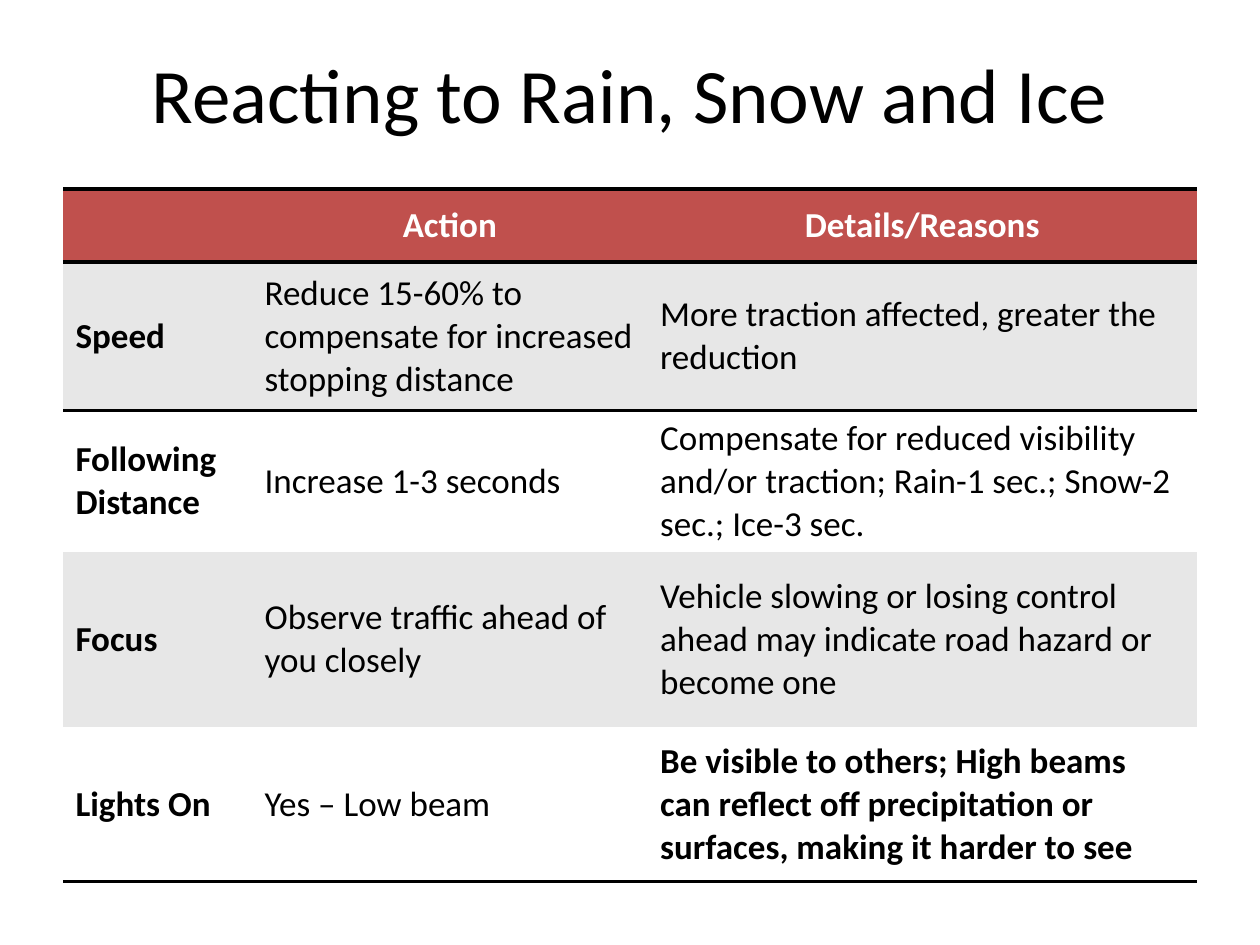
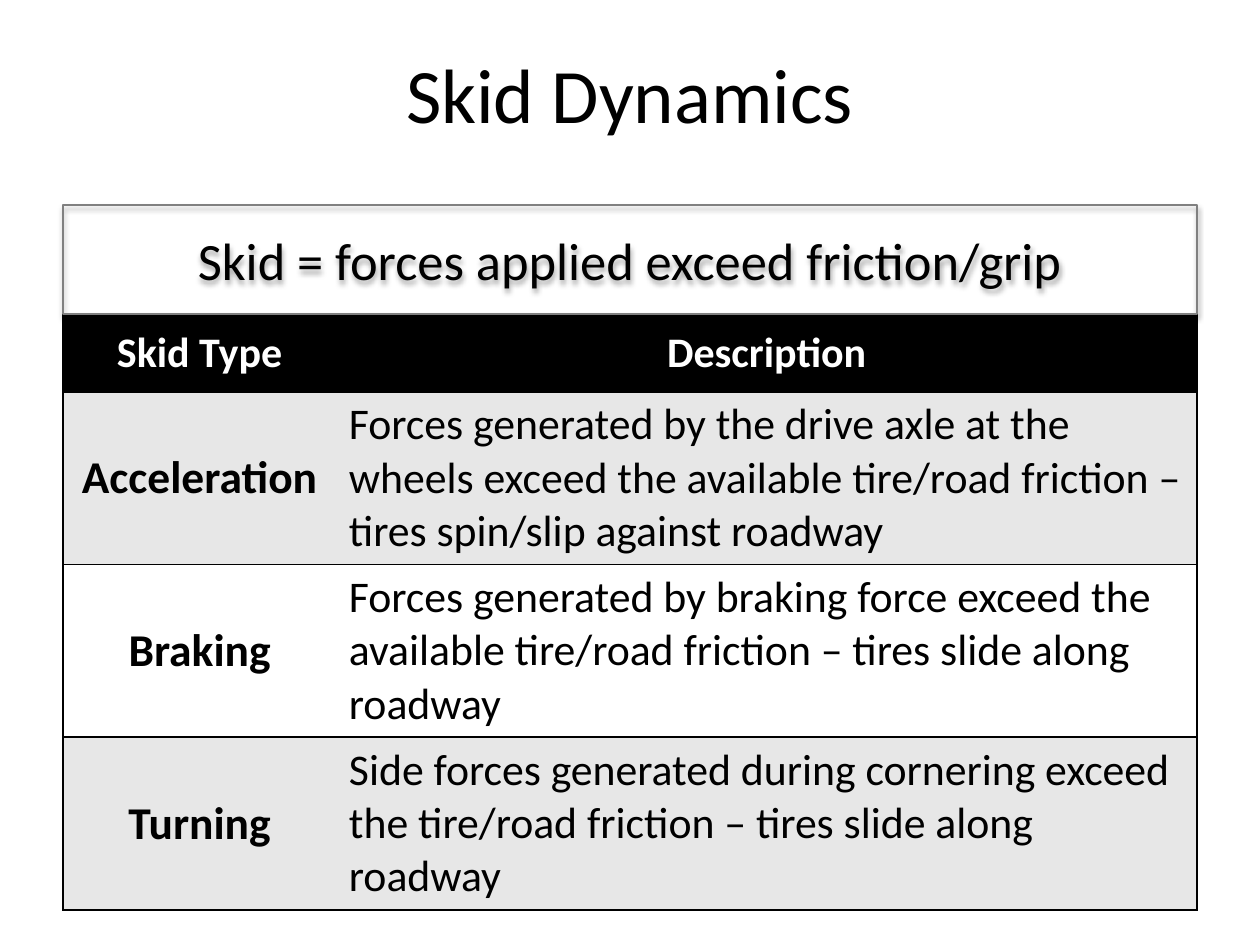
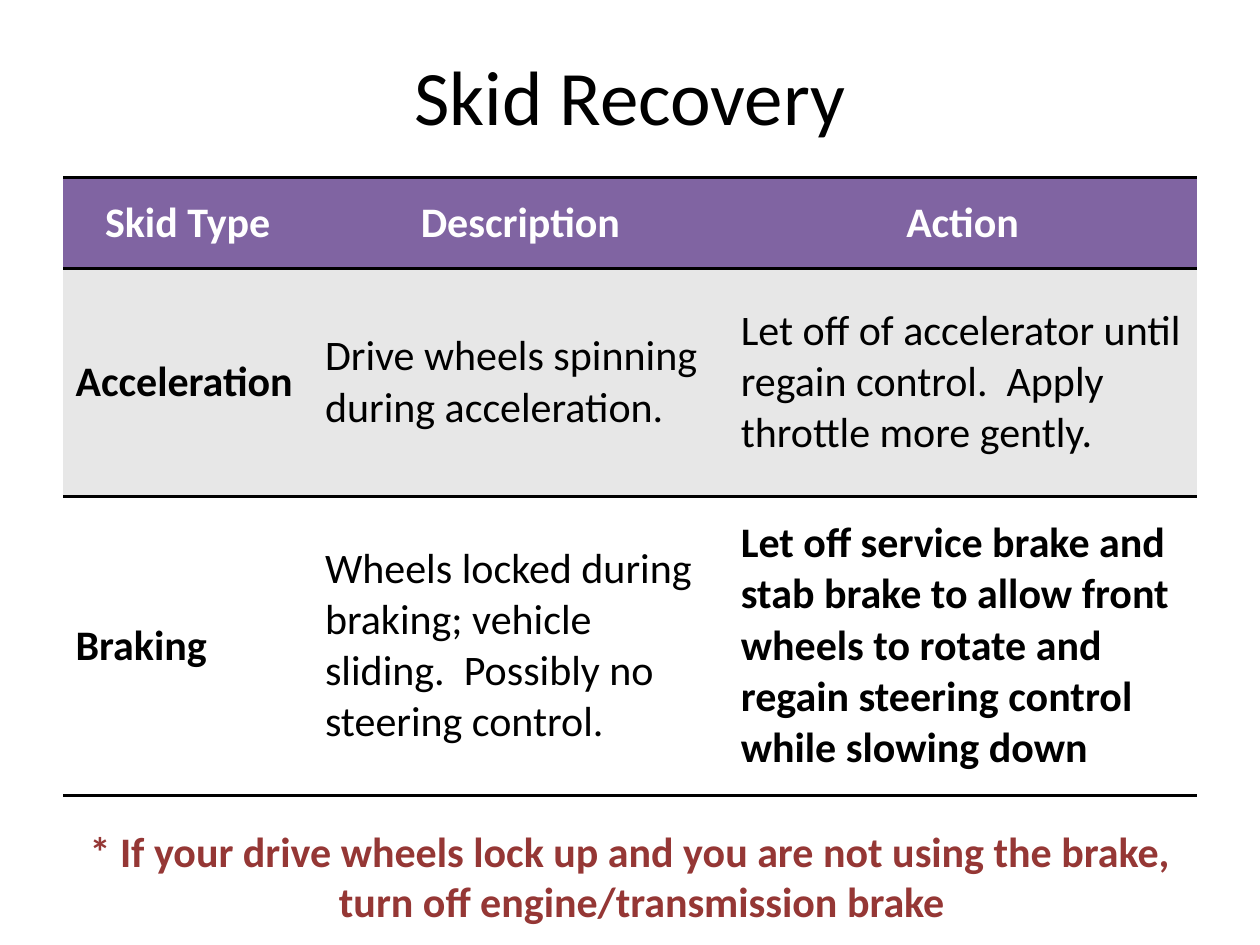
from dataclasses import dataclass

from lxml import etree
from pptx import Presentation
from pptx.dml.color import RGBColor
from pptx.enum.shapes import MSO_SHAPE
from pptx.enum.text import MSO_ANCHOR, MSO_AUTO_SIZE, PP_ALIGN
from pptx.oxml.ns import qn
from pptx.util import Emu, Inches, Pt

BLACK = RGBColor(0x00, 0x00, 0x00)
WHITE = RGBColor(0xFF, 0xFF, 0xFF)
BAND = RGBColor(0xE7, 0xE7, 0xE7)
RED = RGBColor(0xC0, 0x50, 0x4D)
PURPLE = RGBColor(0x80, 0x64, 0xA2)
DARK_RED = RGBColor(0x95, 0x37, 0x35)
GREY = RGBColor(0x80, 0x80, 0x80)

CENTER, LEFT = PP_ALIGN.CENTER, PP_ALIGN.LEFT
MIDDLE, TOP = MSO_ANCHOR.MIDDLE, MSO_ANCHOR.TOP
RECTANGLE = MSO_SHAPE.RECTANGLE

FONT = "Calibri"
SLIDE_W, SLIDE_H = Inches(10), Inches(7.5)
MARGIN, CONTENT = 5, 90  # percent of slide width
NO_STYLE = "{2D5ABB26-0587-4C30-8999-92F81FD0307C}"


def across(percent: float) -> Emu:
    return Emu(round(SLIDE_W * percent / 100))


def down(percent: float) -> Emu:
    return Emu(round(SLIDE_H * percent / 100))


@dataclass(frozen=True)
class TableSpec:
    """Top and row heights in percent of slide height, columns of slide width."""
    top: float
    cols: tuple[float, ...]
    heights: tuple[float, ...]
    rows: tuple[tuple[str, ...], ...]
    header_fill: RGBColor
    header_size: float
    label_size: float
    body_size: float
    rule: float
    label_align: PP_ALIGN = LEFT
    boxed: bool = False
    bold_last: bool = False


@dataclass(frozen=True)
class SlideSpec:
    title: str
    table: TableSpec
    title_top: float = 2.93
    title_height: float = 13.73
    banner: str = ""
    footnote: str = ""


SLIDES = (
    SlideSpec("Reacting to Rain, Snow and Ice", TableSpec(
        top=20, cols=(15, 31.4, 43.6), heights=(7.73, 15.73, 14.93, 18.53, 16.4),
        rows=(
            ("", "Action", "Details/Reasons"),
            ("Speed", "Reduce 15-60% to compensate for increased stopping distance",
             "More traction affected, greater the reduction"),
            ("Following Distance", "Increase 1-3 seconds",
             "Compensate for reduced visibility and/or traction; "
             "Rain-1 sec.; Snow-2 sec.; Ice-3 sec."),
            ("Focus", "Observe traffic ahead of you closely",
             "Vehicle slowing or losing control ahead may indicate "
             "road hazard or become one"),
            ("Lights On", "Yes – Low beam",
             "Be visible to others; High beams can reflect off precipitation "
             "or surfaces, making it harder to see"),
        ),
        header_fill=RED, header_size=20, label_size=20, body_size=20, rule=2,
        bold_last=True)),
    SlideSpec("Skid Dynamics", TableSpec(
        top=33.2, cols=(21.7, 68.3), heights=(8.27, 18.27, 18.27, 18.27),
        rows=(
            ("Skid Type", "Description"),
            ("Acceleration", "Forces generated by the drive axle at the wheels exceed the "
             "available tire/road friction – tires spin/slip against roadway"),
            ("Braking", "Forces generated by braking force exceed the available "
             "tire/road friction – tires slide along roadway"),
            ("Turning", "Side forces generated during cornering exceed the "
             "tire/road friction – tires slide along roadway"),
        ),
        header_fill=BLACK, header_size=24, label_size=26, body_size=25, rule=1,
        label_align=CENTER, boxed=True),
        banner="Skid = forces applied exceed friction/grip"),
    SlideSpec("Skid Recovery", TableSpec(
        top=18.8, cols=(19.8, 33, 37.2), heights=(9.6, 24.1, 31.7),
        rows=(
            ("Skid Type", "Description", "Action"),
            ("Acceleration", "Drive wheels spinning during acceleration.",
             "Let off of accelerator until regain control.  Apply throttle more gently."),
            ("Braking", "Wheels locked during braking; vehicle sliding.  "
             "Possibly no steering control.",
             "Let off service brake and stab brake to allow front wheels to rotate "
             "and regain steering control while slowing down"),
        ),
        header_fill=PURPLE, header_size=24, label_size=24, body_size=24, rule=2,
        bold_last=True),
        title_top=3.33, title_height=13.33,
        footnote="* If your drive wheels lock up and you are not using the brake, "
                 "turn off engine/transmission brake"),
)


def write(tf, text: str, size: float, color: RGBColor = BLACK,
          bold: bool = False, align: PP_ALIGN = CENTER):
    p = tf.paragraphs[0]
    p.alignment = align
    r = p.add_run()
    r.text = text
    for name, value in {"name": FONT, "size": Pt(size), "bold": bold}.items():
        setattr(r.font, name, value)
    r.font.color.rgb = color
    return p


def add_text(s, text: str, top: float, height: float, size: float,
             anchor: MSO_ANCHOR = MIDDLE, **style):
    tf = s.shapes.add_textbox(across(MARGIN), down(top), across(CONTENT), down(height)).text_frame
    tf.word_wrap = True
    tf.vertical_anchor = anchor
    return tf, write(tf, text, size, **style)


def add_banner(s, text: str, top: float, height: float) -> None:
    """Outlined box whose frame and text cast a soft shadow."""
    sp = s.shapes.add_shape(RECTANGLE, across(MARGIN), down(top), across(CONTENT), down(height))
    sp.fill.background()
    sp.line.color.rgb = GREY
    sp.line.width = Pt(1.25)
    sp.shadow.inherit = False
    effects = sp.element.spPr.find(qn("a:effectLst"))
    shadow = etree.SubElement(effects, qn("a:outerShdw"), blurRad=str(Pt(3.1)),
                              dist=str(Pt(1.8)), dir="5400000", rotWithShape="0")
    color = etree.SubElement(shadow, qn("a:srgbClr"), val=str(BLACK))
    etree.SubElement(color, qn("a:alpha"), val="35000")
    sp.text_frame.word_wrap = True
    sp.text_frame.vertical_anchor = MIDDLE
    write(sp.text_frame, text, 30)


def add_borders(cell, sides: str, width: float) -> None:
    """Sides are letters in the order L, R, T, B."""
    tc_pr = cell._tc.get_or_add_tcPr()
    for i, side in enumerate(sides):
        ln = etree.Element(qn(f"a:ln{side}"), w=str(Pt(width)))
        fill = etree.SubElement(ln, qn("a:solidFill"))
        etree.SubElement(fill, qn("a:srgbClr"), val=str(BLACK))
        tc_pr.insert(i, ln)


def border_sides(spec: TableSpec, row: int, col: int) -> str:
    if spec.boxed:
        left = "L" if col == 0 else ""
        right = "R" if col == len(spec.cols) - 1 else ""
        return left + right + "TB"
    if row == 0:
        return "TB"
    top = "T" if row == 1 else ""
    return top + ("B" if row == len(spec.rows) - 1 else "")


def add_table(s, spec: TableSpec) -> None:
    table = s.shapes.add_table(len(spec.rows), len(spec.cols), across(MARGIN), down(spec.top),
                               across(CONTENT), down(sum(spec.heights))).table
    table._tbl.tblPr.find(qn("a:tableStyleId")).text = NO_STYLE
    table.first_row = table.horz_banding = False
    for column, width in zip(table.columns, spec.cols):
        column.width = across(width)
    for row, height in zip(table.rows, spec.heights):
        row.height = down(height)
    last = (len(spec.rows) - 1, len(spec.cols) - 1)
    for i, texts in enumerate(spec.rows):
        for j, text in enumerate(texts):
            cell = table.cell(i, j)
            cell.vertical_anchor = MIDDLE
            cell.fill.solid()
            cell.fill.fore_color.rgb = spec.header_fill if i == 0 else BAND if i % 2 else WHITE
            add_borders(cell, border_sides(spec, i, j), spec.rule)
            if not text:
                continue
            if i == 0:
                write(cell.text_frame, text, spec.header_size, WHITE, True)
            elif j == 0:
                write(cell.text_frame, text, spec.label_size, bold=True, align=spec.label_align)
            else:
                bold = spec.bold_last and (i, j) == last
                write(cell.text_frame, text, spec.body_size, bold=bold, align=LEFT)


def add_footnote(s, text: str) -> None:
    tf, p = add_text(s, text, 86.67, 12.13, 24, TOP, color=DARK_RED, bold=True)
    tf.auto_size = MSO_AUTO_SIZE.SHAPE_TO_FIT_TEXT
    p_pr = p._p.get_or_add_pPr()
    p_pr.set("marL", str(Inches(0.19)))
    p_pr.set("indent", str(-Inches(0.19)))


def main() -> None:
    prs = Presentation()
    prs.slide_width, prs.slide_height = SLIDE_W, SLIDE_H
    for spec in SLIDES:
        s = prs.slides.add_slide(prs.slide_layouts[6])
        add_text(s, spec.title, spec.title_top, spec.title_height, 44)
        add_table(s, spec.table)
        if spec.banner:
            height = 11.47
            add_banner(s, spec.banner, spec.table.top - height, height)
        if spec.footnote:
            add_footnote(s, spec.footnote)
    prs.save("out.pptx")


if __name__ == "__main__":
    main()
